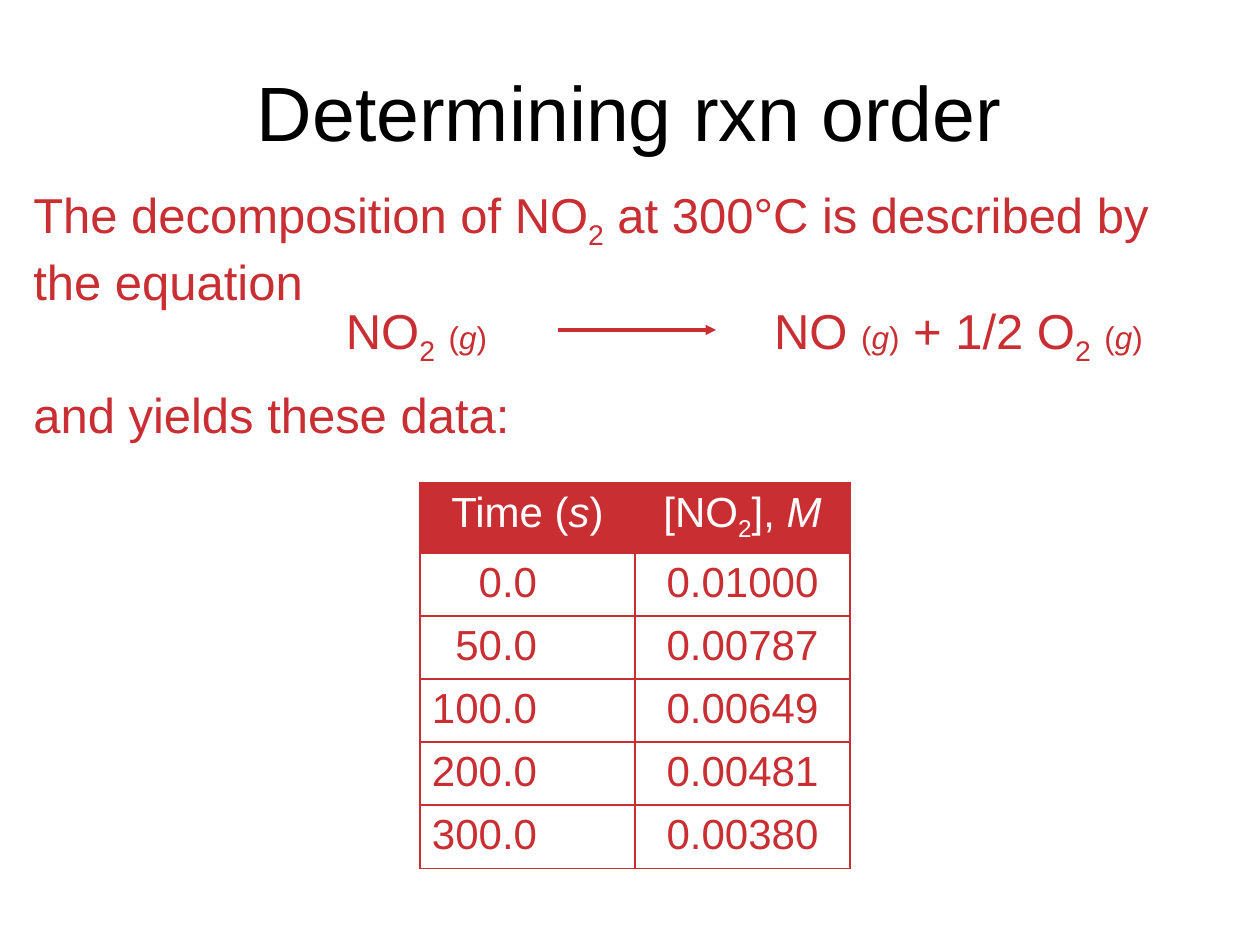
"""Build a slide on finding the reaction order of NO₂ decomposition."""

from dataclasses import dataclass

from lxml.etree import SubElement
from pptx import Presentation
from pptx.dml.color import RGBColor
from pptx.enum.shapes import MSO_CONNECTOR
from pptx.enum.text import MSO_ANCHOR, MSO_AUTO_SIZE, PP_ALIGN
from pptx.oxml.ns import qn
from pptx.slide import Slide
from pptx.table import _Cell
from pptx.text.text import _Paragraph
from pptx.util import Pt

EMU_PER_PX = 914400 / 126


@dataclass(frozen=True)
class Theme:
    font: str = "Arial"
    ink: str = "000000"
    accent: str = "C82E32"
    paper: str = "FFFFFF"
    title: int = 44
    body: int = 28
    table: int = 24
    state: int = 18
    arrow: float = 1.75
    border: float = 1


THEME = Theme()


@dataclass(frozen=True)
class Piece:
    text: str
    size: int | None = None
    italic: bool = False
    subscript: bool = False


@dataclass(frozen=True)
class TextBlock:
    left: int
    top: int
    width: int
    height: int
    pieces: tuple[Piece, ...]
    size: int = THEME.body
    color: str = THEME.accent
    alignment: PP_ALIGN = PP_ALIGN.LEFT
    wrap: bool = False
    anchor: MSO_ANCHOR = MSO_ANCHOR.TOP


TWO = Piece("2", subscript=True)
GAS = (
    Piece(" "),
    Piece("(", THEME.state),
    Piece("g", THEME.state, italic=True),
    Piece(")", THEME.state),
)
BLOCKS = (
    TextBlock(94, 32, 1071, 158, (Piece("Determining rxn order"),), THEME.title,
              THEME.ink, PP_ALIGN.CENTER, True, MSO_ANCHOR.MIDDLE),
    TextBlock(21, 178, 1207, 130,
              (Piece("The decomposition of NO"), TWO,
               Piece(" at 300°C is described by the equation")), wrap=True),
    TextBlock(325, 294, 183, 72, (Piece("NO"), TWO, *GAS),
              alignment=PP_ALIGN.CENTER),
    TextBlock(747, 294, 423, 72,
              (Piece("NO"), *GAS, Piece(" + 1/2 O"), TWO, *GAS),
              alignment=PP_ALIGN.CENTER),
    TextBlock(21, 378, 501, 72, (Piece("and yields these data:"),)),
)
HEADER = (
    (Piece("Time ("), Piece("s", italic=True), Piece(")")),
    (Piece("[NO"), TWO, Piece("], "), Piece("M", italic=True)),
)
DATA = (
    ("0.0", "0.01000"),
    ("50.0", "0.00787"),
    ("100.0", "0.00649"),
    ("200.0", "0.00481"),
    ("300.0", "0.00380"),
)
TABLE_LEFT, TABLE_TOP = 420, 483
COLUMN_WIDTH, HEADER_HEIGHT, ROW_HEIGHT = 215, 70, 63
TIME_MARGIN = 98


def px(length: int) -> int:
    """Turn pixels into EMU."""
    return round(length * EMU_PER_PX)


def apply_format(target: object, values: dict[str, object]) -> None:
    """Set each named attribute on the target."""
    for name, value in values.items():
        setattr(target, name, value)


def write_pieces(paragraph: _Paragraph, pieces: tuple[Piece, ...], size: int,
                 color: str, alignment: PP_ALIGN) -> None:
    """Write formatted runs into a paragraph."""
    paragraph.alignment = alignment
    for piece in pieces:
        run = paragraph.add_run()
        run.text = piece.text
        apply_format(run.font, {"name": THEME.font, "size": Pt(piece.size or size),
                                "italic": piece.italic, "bold": False})
        run.font.color.rgb = RGBColor.from_string(color)
        if piece.subscript:
            run._r.get_or_add_rPr().set("baseline", "-25000")


def draw_text(slide: Slide, block: TextBlock) -> None:
    """Draw one text box."""
    box = slide.shapes.add_textbox(
        *map(px, (block.left, block.top, block.width, block.height)))
    fitting = MSO_AUTO_SIZE.NONE if block.anchor == MSO_ANCHOR.MIDDLE else MSO_AUTO_SIZE.SHAPE_TO_FIT_TEXT
    apply_format(box.text_frame, {"word_wrap": block.wrap, "auto_size": fitting,
                                  "vertical_anchor": block.anchor})
    write_pieces(box.text_frame.paragraphs[0], block.pieces, block.size,
                 block.color, block.alignment)


def draw_arrow(slide: Slide, left: int, right: int, y: int) -> None:
    """Draw the horizontal reaction arrow."""
    arrow = slide.shapes.add_connector(
        MSO_CONNECTOR.STRAIGHT, px(left), px(y), px(right), px(y))
    arrow.line.width = Pt(THEME.arrow)
    arrow.line.color.rgb = RGBColor.from_string(THEME.accent)
    SubElement(arrow.line._get_or_add_ln(), qn("a:tailEnd"), type="triangle")
    SubElement(arrow._element.spPr, qn("a:effectLst"))


def add_borders(cell: _Cell) -> None:
    """Outline all four sides of a cell."""
    properties = cell._tc.get_or_add_tcPr()
    for side in ("a:lnL", "a:lnR", "a:lnT", "a:lnB"):
        line = SubElement(properties, qn(side), w=str(Pt(THEME.border)))
        fill = SubElement(line, qn("a:solidFill"))
        SubElement(fill, qn("a:srgbClr"), val=THEME.accent)


def draw_table(slide: Slide) -> None:
    """Draw the table of times and concentrations."""
    rows = (HEADER, *(tuple((Piece(value),) for value in row) for row in DATA))
    heights = (HEADER_HEIGHT, *(ROW_HEIGHT for _ in DATA))
    table = slide.shapes.add_table(
        len(rows), len(HEADER), px(TABLE_LEFT), px(TABLE_TOP),
        px(COLUMN_WIDTH * len(HEADER)), px(sum(heights))).table
    apply_format(table, {"first_row": False, "horz_banding": False})
    for column in table.columns:
        column.width = px(COLUMN_WIDTH)
    for row_index, (row, height) in enumerate(zip(rows, heights)):
        table.rows[row_index].height = px(height)
        for column_index, pieces in enumerate(row):
            cell = table.cell(row_index, column_index)
            add_borders(cell)
            color, alignment = THEME.accent, PP_ALIGN.CENTER
            if row_index == 0:
                cell.fill.solid()
                cell.fill.fore_color.rgb = RGBColor.from_string(THEME.accent)
                color = THEME.paper
            else:
                cell.fill.background()
                if column_index == 0:
                    alignment = PP_ALIGN.RIGHT
                    apply_format(cell, {"margin_left": 0,
                                        "margin_right": px(TIME_MARGIN)})
            write_pieces(cell.text_frame.paragraphs[0], pieces, THEME.table,
                         color, alignment)


def main() -> None:
    """Build and save the presentation."""
    presentation = Presentation()
    apply_format(presentation, {"slide_width": px(1260), "slide_height": px(945)})
    slide = presentation.slides.add_slide(presentation.slide_layouts[6])
    for block in BLOCKS:
        draw_text(slide, block)
    draw_arrow(slide, 558, 716, 330)
    draw_table(slide)
    presentation.save("out.pptx")


if __name__ == "__main__":
    main()
